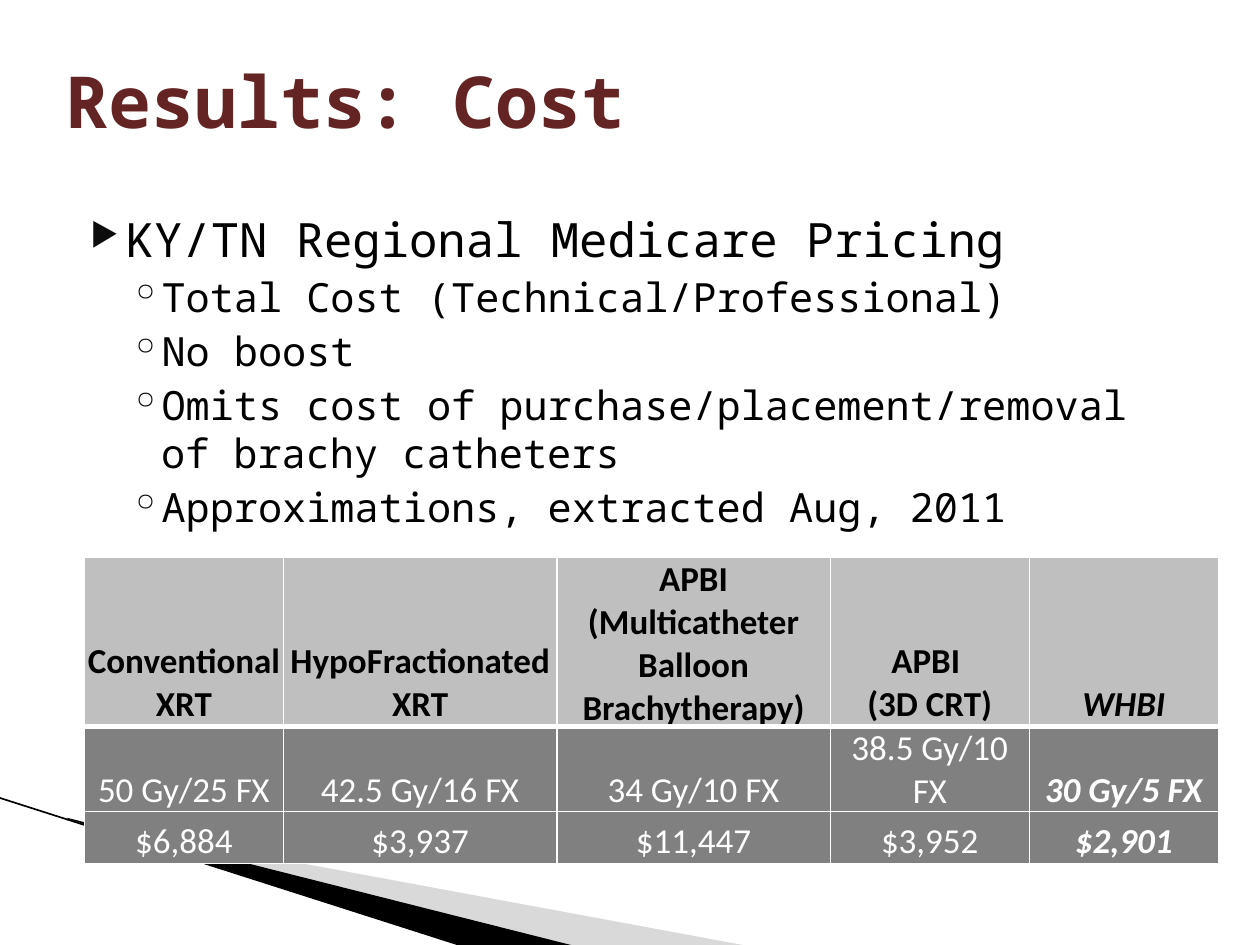
from lxml.etree import SubElement
from pptx import Presentation
from pptx.dml.color import RGBColor
from pptx.enum.shapes import MSO_CONNECTOR
from pptx.enum.text import MSO_ANCHOR, PP_ALIGN
from pptx.oxml.ns import qn
from pptx.util import Inches, Pt

MONO, SANS = "Noto Sans Mono", "Calibri"
BLACK, WHITE = "000000", "FFFFFF"

BULLETS = [
    (0, "KY/TN Regional Medicare Pricing"),
    (1, "Total Cost (Technical/Professional)"),
    (1, "No boost"),
    (1, "Omits cost of purchase/placement/removal of brachy catheters"),
    (1, "Approximations, extracted Aug, 2011"),
]
# Per level: text size, left margin, hanging indent, space before, symbol, symbol percent
LEVELS = [(27, 0.4, -0.28, 4, "▶", 68), (23, 0.68, -0.25, 3.2, "◦", 100)]

COSTS = [
    ["Conventional XRT", "HypoFractionated XRT",
     "APBI (Multicatheter Balloon Brachytherapy)", "APBI \n(3D CRT)", "WHBI"],
    ["50 Gy/25 FX", "42.5 Gy/16 FX", "34 Gy/10 FX", "38.5 Gy/10 FX", "30 Gy/5 FX"],
    ["$6,884", "$3,937", "$11,447", "$3,952", "$2,901"],
]
COLUMN_WIDTHS = [1.58, 2.17, 2.17, 1.58, 1.5]
ROW_HEIGHTS = [0.83, 0.41, 0.41]


def color(value):
    return RGBColor.from_string(value)


def style_font(font, fill, **values):
    for name, value in values.items():
        setattr(font, name, value)
    font.color.rgb = color(fill)


def add_wedge(slide, points, fill, opacity=100):
    start, *rest = [(Inches(x), Inches(y)) for x, y in points]
    builder = slide.shapes.build_freeform(*start)
    builder.add_line_segments(rest, close=True)
    shape = builder.convert_to_shape()
    shape.shadow.inherit = False
    shape.line.fill.background()
    shape.fill.solid()
    shape.fill.fore_color.rgb = color(fill)
    if opacity < 100:
        rgb = shape.fill._xPr.find(".//" + qn("a:srgbClr"))
        SubElement(rgb, qn("a:alpha"), val=str(opacity * 1000))


def add_line(slide, start, end, fill, width):
    ends = [Inches(value) for value in (*start, *end)]
    line = slide.shapes.add_connector(MSO_CONNECTOR.STRAIGHT, *ends)
    line.line.color.rgb = color(fill)
    line.line.width = Pt(width)
    SubElement(line._element.spPr, qn("a:effectLst"))


def add_text_frame(slide, left, top, width, height, anchor):
    box = slide.shapes.add_textbox(*map(Inches, (left, top, width, height)))
    frame = box.text_frame
    frame.word_wrap = True
    frame.vertical_anchor = anchor
    return frame


def add_title(slide, text):
    frame = add_text_frame(slide, 0.42, 0.17, 9, 1.25, MSO_ANCHOR.MIDDLE)
    run = frame.paragraphs[0].add_run()
    run.text = text
    style_font(run.font, "632423", name=MONO, size=Pt(41), bold=True)


def set_bullet(paragraph, symbol, percent, left, indent):
    properties = paragraph._p.get_or_add_pPr()
    properties.set("marL", str(Inches(left)))
    properties.set("indent", str(Inches(indent)))
    bullet_color = SubElement(properties, qn("a:buClr"))
    SubElement(bullet_color, qn("a:srgbClr"), val="0C0C0C")
    SubElement(properties, qn("a:buSzPct"), val=str(percent * 1000))
    SubElement(properties, qn("a:buChar"), char=symbol)


def add_bullets(slide, items):
    frame = add_text_frame(slide, 0.5, 1.62, 9, 4.95, MSO_ANCHOR.TOP)
    for index, (level, text) in enumerate(items):
        paragraph = frame.add_paragraph() if index else frame.paragraphs[0]
        size, left, indent, space, symbol, percent = LEVELS[level]
        paragraph.level = level
        set_bullet(paragraph, symbol, percent, left, indent)
        paragraph.space_before = Pt(space if index else 0)
        run = paragraph.add_run()
        run.text = text
        style_font(run.font, BLACK, name=MONO, size=Pt(size))


def set_borders(cell, widths):
    properties = cell._tc.get_or_add_tcPr()
    for position, (side, width) in enumerate(widths.items()):
        line = properties.makeelement(qn(f"a:ln{side}"), {"w": str(Pt(width))})
        fill = SubElement(line, qn("a:solidFill"))
        SubElement(fill, qn("a:srgbClr"), val=WHITE)
        properties.insert(position, line)


def fill_cell(cell, text, is_header, is_highlight, top_border, bottom_border):
    cell.fill.solid()
    cell.fill.fore_color.rgb = color("BFBFBF" if is_header else "808080")
    layout = {
        "vertical_anchor": MSO_ANCHOR.BOTTOM,
        "margin_left": Inches(0.01),
        "margin_right": Inches(0.01),
        "margin_top": Inches(0.01),
        "margin_bottom": 0,
    }
    for name, value in layout.items():
        setattr(cell, name, value)
    set_borders(cell, {"L": 1, "R": 1, "T": top_border, "B": bottom_border})
    cell.text = text
    for paragraph in cell.text_frame.paragraphs:
        paragraph.alignment = PP_ALIGN.CENTER
        for run in paragraph.runs:
            style_font(run.font, BLACK if is_header else WHITE, name=SANS, size=Pt(20),
                       bold=is_header or is_highlight, italic=is_highlight)


def add_cost_table(slide, rows):
    frame = slide.shapes.add_table(
        len(rows), len(rows[0]), Inches(0.67), Inches(4.42),
        Inches(sum(COLUMN_WIDTHS)), Inches(sum(ROW_HEIGHTS)))
    table = frame.table
    for column, width in zip(table.columns, COLUMN_WIDTHS):
        column.width = Inches(width)
    for row, height in zip(table.rows, ROW_HEIGHTS):
        row.height = Inches(height)
    for r, values in enumerate(rows):
        for c, text in enumerate(values):
            # A heavier rule separates the header from the body
            fill_cell(table.cell(r, c), text, r == 0, c == len(values) - 1,
                      top_border=3 if r == 1 else 1,
                      bottom_border=3 if r == 0 else 1)


def main():
    presentation = Presentation()
    presentation.slide_width, presentation.slide_height = Inches(10), Inches(7.5)
    slide = presentation.slides.add_slide(presentation.slide_layouts[6])

    # Corner decoration
    add_wedge(slide, [(0.55, 6.51), (5.95, 7.51), (4.56, 7.51), (0.55, 6.5)],
              "A2A2A2", opacity=40)
    add_wedge(slide, [(0.53, 6.49), (4.57, 7.51), (3.72, 7.52), (0.54, 6.5)], BLACK)
    add_line(slide, (-0.01, 6.33), (3.71, 7.52), BLACK, 0.95)

    # Content
    add_title(slide, "Results: Cost")
    add_bullets(slide, BULLETS)
    add_cost_table(slide, COSTS)
    presentation.save("out.pptx")


if __name__ == "__main__":
    main()
